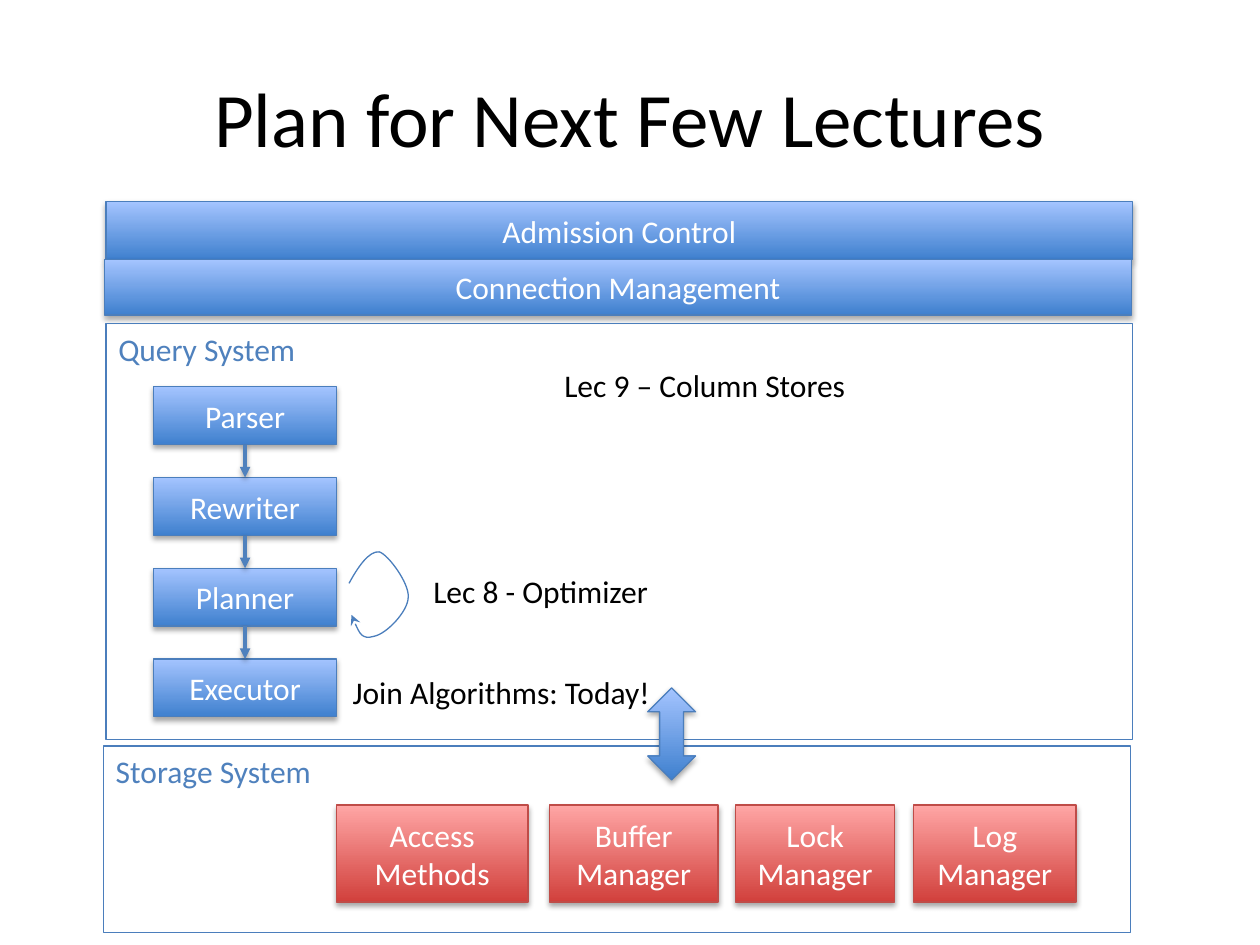
from lxml.etree import SubElement
from pptx import Presentation
from pptx.dml.color import RGBColor
from pptx.enum.shapes import MSO_CONNECTOR, MSO_SHAPE
from pptx.enum.text import MSO_ANCHOR, PP_ALIGN
from pptx.oxml.ns import qn
from pptx.util import Pt

PX = 9144
FONT = "Calibri"
BLACK = RGBColor(0x00, 0x00, 0x00)
WHITE = RGBColor(0xFF, 0xFF, 0xFF)
ACCENT = RGBColor(0x4F, 0x81, 0xBD)
EDGE = RGBColor(0x4B, 0x7E, 0xBC)
BLUE = (RGBColor(0x3F, 0x80, 0xCE), RGBColor(0xA4, 0xC4, 0xFF), EDGE)
RED = (RGBColor(0xD1, 0x40, 0x3C), RGBColor(0xFF, 0xA6, 0xA5),
       RGBColor(0xBF, 0x4C, 0x48))


def scale(*sizes):
    """Turn px lengths into EMU."""
    return [size * PX for size in sizes]


def write(shape, text, color, size=18, align=PP_ALIGN.LEFT,
          anchor=MSO_ANCHOR.TOP, wrap=True):
    """Put one styled paragraph into a shape."""
    frame = shape.text_frame
    frame.word_wrap = wrap
    frame.vertical_anchor = anchor
    para = frame.paragraphs[0]
    para.text = text
    para.alignment = align
    para.font.name = FONT
    para.font.size = Pt(size)
    para.font.color.rgb = color


def shade(shape, alpha, dist):
    """Give a shape or connector a soft shadow below it."""
    props = shape.element.spPr
    effects = props.find(qn("a:effectLst"))
    if effects is None:
        effects = SubElement(props, qn("a:effectLst"))
    outer = SubElement(effects, qn("a:outerShdw"), blurRad="40000",
                       dist=str(dist), dir="5400000", rotWithShape="0")
    tint = SubElement(outer, qn("a:srgbClr"), val="000000")
    SubElement(tint, qn("a:alpha"), val=str(alpha * 1000))


def tip(shape, kind):
    """Add an arrowhead at the end of a line."""
    line = shape.element.spPr.find(qn("a:ln"))
    SubElement(line, qn("a:tailEnd"), type=kind)


def outline(shape, color):
    """Draw a thin border and drop the theme shadow."""
    shape.shadow.inherit = False
    shape.line.color.rgb = color
    shape.line.width = Pt(0.75)


def block(slide, box, theme, text="", kind=MSO_SHAPE.RECTANGLE):
    """Add a gradient shape with a centred label."""
    low, high, edge = theme
    shape = slide.shapes.add_shape(kind, *scale(*box))
    outline(shape, edge)
    shape.fill.gradient()
    shape.fill.gradient_angle = 90
    for stop, color in zip(shape.fill.gradient_stops, (low, high)):
        stop.color.rgb = color
    shade(shape, 35, 23000)
    if text:
        write(shape, text, WHITE, align=PP_ALIGN.CENTER,
              anchor=MSO_ANCHOR.MIDDLE)
    return shape


def panel(slide, box, text):
    """Add an unfilled frame with its name at the top left."""
    shape = slide.shapes.add_shape(MSO_SHAPE.RECTANGLE, *scale(*box))
    outline(shape, EDGE)
    shape.fill.background()
    write(shape, text, ACCENT)


def label(slide, box, text, **style):
    """Add a plain black text box."""
    shape = slide.shapes.add_textbox(*scale(*box))
    write(shape, text, BLACK, **style)


def link(slide, upper, lower):
    """Join two stacked blocks with an arrow."""
    line = slide.shapes.add_connector(MSO_CONNECTOR.STRAIGHT, 0, 0, 0, 0)
    line.begin_connect(upper, 2)
    line.end_connect(lower, 0)
    line.line.color.rgb = ACCENT
    line.line.width = Pt(2)
    tip(line, "triangle")
    shade(line, 38, 20000)


def loop(slide, left, top):
    """Draw the curved arrow that returns to the planner."""
    points = [(0, 25), (7, 12), (16, -1), (24, 0), (31, 2), (48, 25), (47, 36),
              (47, 47), (30, 65), (20, 67), (10, 70), (6, 60), (2, 50)]
    spots = [(left + x, top + y) for x, y in points]
    draft = slide.shapes.build_freeform(*spots[0], scale=PX)
    draft.add_line_segments(spots[1:], close=False)
    shape = draft.convert_to_shape()
    route = next(shape.element.iter(qn("a:path")))
    parts = route.findall(qn("a:lnTo"))
    for first in range(0, len(parts), 3):
        curve = SubElement(route, qn("a:cubicBezTo"))
        for part in parts[first:first + 3]:
            curve.append(part[0])
            route.remove(part)
    outline(shape, EDGE)
    shape.fill.background()
    tip(shape, "stealth")


def access(slide, left, top, width):
    """Stack the two bars that guard the system."""
    block(slide, (left, top, width, 46), BLUE, "Admission Control")
    block(slide, (left - 1, top + 46, width, 44), BLUE,
          "Connection Management")


def query(slide, left, top, width, height):
    """Build the query system with its chain of steps."""
    panel(slide, (left, top, width, height), "Query System")
    names = ("Parser", "Rewriter", "Planner", "Executor")
    steps = [block(slide, (left + 38, top + 50 + 72 * row, 145, 46), BLUE, name)
             for row, name in enumerate(names)]
    for upper, lower in zip(steps, steps[1:]):
        link(slide, upper, lower)
    loop(slide, left + 193, top + 181)
    label(slide, (left + 250, top + 192, 235, 40), "Lec 8 - Optimizer")
    label(slide, (left + 354, top + 29, 301, 40), "Lec 9 – Column Stores")
    label(slide, (left + 186, top + 272, 259, 40), "Join Algorithms: Today!",
          wrap=False)


def storage(slide, left, top, width, height):
    """Build the storage system and its link to the queries."""
    panel(slide, (left, top, width, height), "Storage System")
    parts = (("Access Methods", 185, 152), ("Buffer Manager", 354, 134),
             ("Lock Manager", 502, 126), ("Log Manager", 643, 129))
    for name, shift, span in parts:
        block(slide, (left + shift, top + 47, span, 77), RED, name)
    block(slide, (left + 432, top - 46, 38, 73), BLUE,
          kind=MSO_SHAPE.UP_DOWN_ARROW)


def main():
    """Build and save the slide."""
    deck = Presentation()
    deck.slide_width, deck.slide_height = scale(1000, 750)
    slide = deck.slides.add_slide(deck.slide_layouts[6])
    label(slide, (50, 30, 900, 125), "Plan for Next Few Lectures", size=44,
          align=PP_ALIGN.CENTER, anchor=MSO_ANCHOR.MIDDLE)
    access(slide, 84, 160, 815)
    query(slide, 84, 257, 815, 330)
    storage(slide, 82, 592, 815, 148)
    deck.save("out.pptx")


if __name__ == "__main__":
    main()
